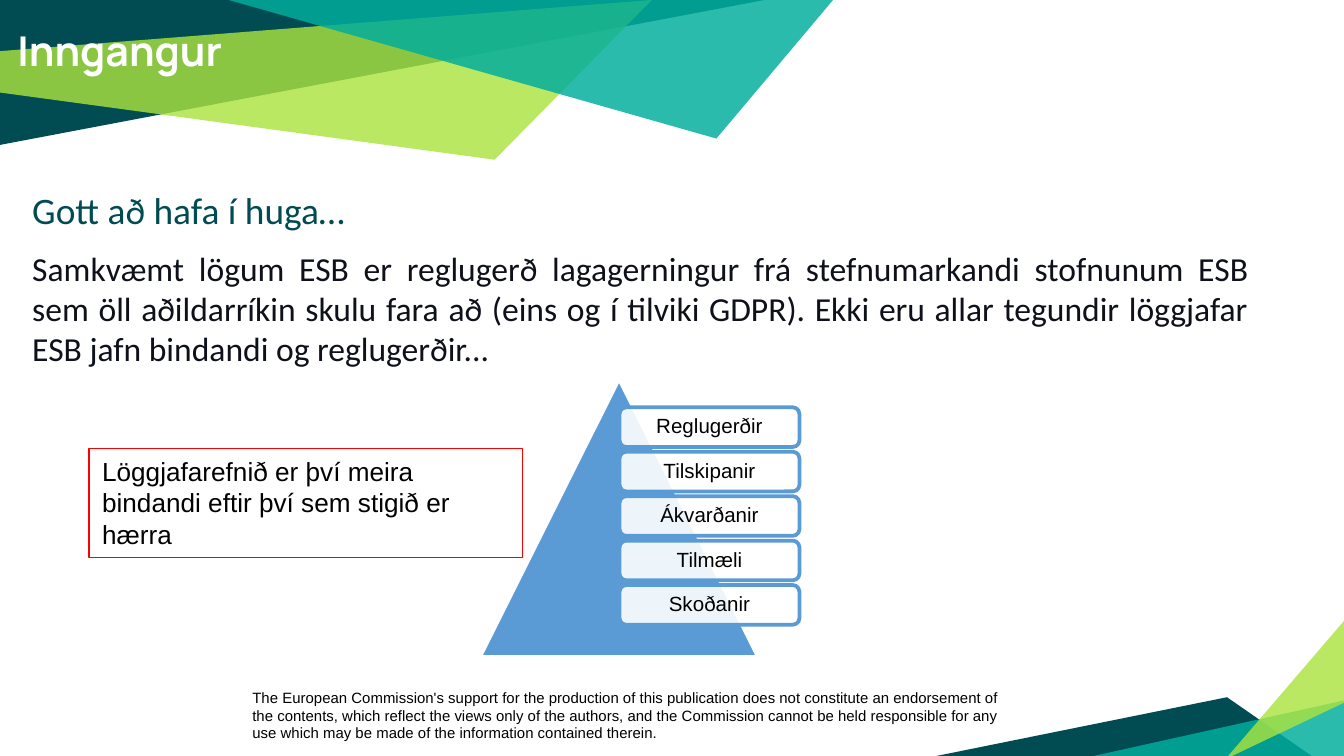
from lxml import etree
from pptx import Presentation
from pptx.dml.color import RGBColor
from pptx.enum import shapes as kinds, text as modes
from pptx.oxml.ns import qn
from pptx.util import Cm, Pt

theme = {
    "dark": "004C52", "lime": "ABE33F", "teal": "00AE9D", "blue": "5B9BD5",
    "white": "FFFFFF", "black": "000000", "ink": "0E101A", "red": "FF0000",
    "title": 22, "head": 20, "body": 18, "note": 14, "step": 11, "foot": 8,
}

bands = [
    ("dark", 100, [(0, 0), (0, 2.74), (14.45, 0)]),
    ("lime", 81, [(-0.03, 0.97), (0, 1.75), (9.35, 3.02), (12.32, 0)]),
    ("dark", 100, [(17.7, 14.29), (24.79, 14.29), (23.19, 13.18)]),
    ("teal", 83, [(25.45, 13.23), (25.45, 14.35), (20.4, 14.35)]),
    ("lime", 81, [(25.45, 13.26), (25.45, 11.68), (23.16, 14.35)]),
    ("teal", 83, [(4.32, 0), (13.54, 2.62), (15.77, -0.03), (15.47, 0)]),
]

foot = (
    "The European Commission's support for the production of this publication "
    "does not constitute an endorsement of the contents, which reflect the views "
    "only of the authors, and the Commission cannot be held responsible for any "
    "use which may be made of the information contained therein."
)
body = (
    "Samkvæmt lögum ESB er reglugerð lagagerningur frá stefnumarkandi stofnunum "
    "ESB sem öll aðildarríkin skulu fara að (eins og í tilviki GDPR). Ekki eru "
    "allar tegundir löggjafar ESB jafn bindandi og reglugerðir..."
)
note = "Löggjafarefnið er því meira bindandi eftir því sem stigið er hærra"
steps = ["Reglugerðir", "Tilskipanir", "Ákvarðanir", "Tilmæli", "Skoðanir"]

left, right = modes.PP_ALIGN.LEFT, modes.PP_ALIGN.JUSTIFY
top, mid = modes.MSO_ANCHOR.TOP, modes.MSO_ANCHOR.MIDDLE
texts = [
    (foot, (4.52, 12.88, 14.71, 1.27), "foot", "Arial", "black", left, top, 0.13),
    ("Inngangur", (0.08, 0.23, 21.51, 1.52), "title", "Manrope", "white", left, top, 0.25),
    (body, (0.36, 4.55, 23.5, 3.18), "body", "Calibri", "ink", right, top, 0.13),
    ("Gott að hafa í huga…", (0.36, 3.4, 17.6, 1.14), "head", "Calibri", "dark", left, mid, 0.25),
]


def paint(shape, hue=None, alpha=100, edge=None, width=1):
    shape.shadow.inherit = False
    if hue:
        shape.fill.solid()
        shape.fill.fore_color.rgb = RGBColor.from_string(theme[hue])
        if alpha < 100:
            tint = shape.fill._xPr.find(qn("a:solidFill"))[0]
            etree.SubElement(tint, qn("a:alpha")).set("val", str(alpha * 1000))
    else:
        shape.fill.background()
    if edge:
        shape.line.color.rgb = RGBColor.from_string(theme[edge])
        shape.line.width = Pt(width)
    else:
        shape.line.fill.background()


def write(shape, words, size, face, hue, align, anchor, pad, side=0.25):
    frame = shape.text_frame
    frame.text = words
    frame.word_wrap = True
    frame.vertical_anchor = anchor
    frame.margin_left = frame.margin_right = Cm(side)
    frame.margin_top = frame.margin_bottom = Cm(pad)
    para = frame.paragraphs[0]
    para.alignment = align
    font = para.runs[0].font
    font.size, font.name = Pt(theme[size]), face
    font.bold = size == "title"
    font.color.rgb = RGBColor.from_string(theme[hue])
    return para


def add(kind, box):
    return slide.shapes.add_shape(kind, *map(Cm, box))


deck = Presentation()
deck.slide_width, deck.slide_height = Cm(25.4), Cm(14.29)
slide = deck.slides.add_slide(deck.slide_layouts[6])
forms = kinds.MSO_SHAPE

for hue, alpha, points in bands:
    spots = [(Cm(x), Cm(y)) for x, y in points]
    pen = slide.shapes.build_freeform(*spots[0])
    pen.add_line_segments(spots[1:], close=True)
    paint(pen.convert_to_shape(), hue, alpha)

for words, box, *style in texts:
    write(slide.shapes.add_textbox(*map(Cm, box)), words, *style)

paint(add(forms.ISOSCELES_TRIANGLE, (9.07, 7.16, 5.26, 5.26)), "blue", 100, "white", 2)

for row, words in enumerate(steps):
    card = add(forms.ROUNDED_RECTANGLE, (11.71, 7.7 + row * 0.84, 3.4, 0.75))
    paint(card, "white", 90, "blue", 2)
    para = write(card, words, "step", "Arial", "black", modes.PP_ALIGN.CENTER, mid, 0.13, 0.13)
    para.line_spacing = 0.9

card = add(forms.RECTANGLE, (1.68, 8.48, 8.2, 2.06))
paint(card, None, 100, "red", 0.75)
write(card, note, "note", "Arial", "black", left, top, 0.13)

deck.save("out.pptx")
